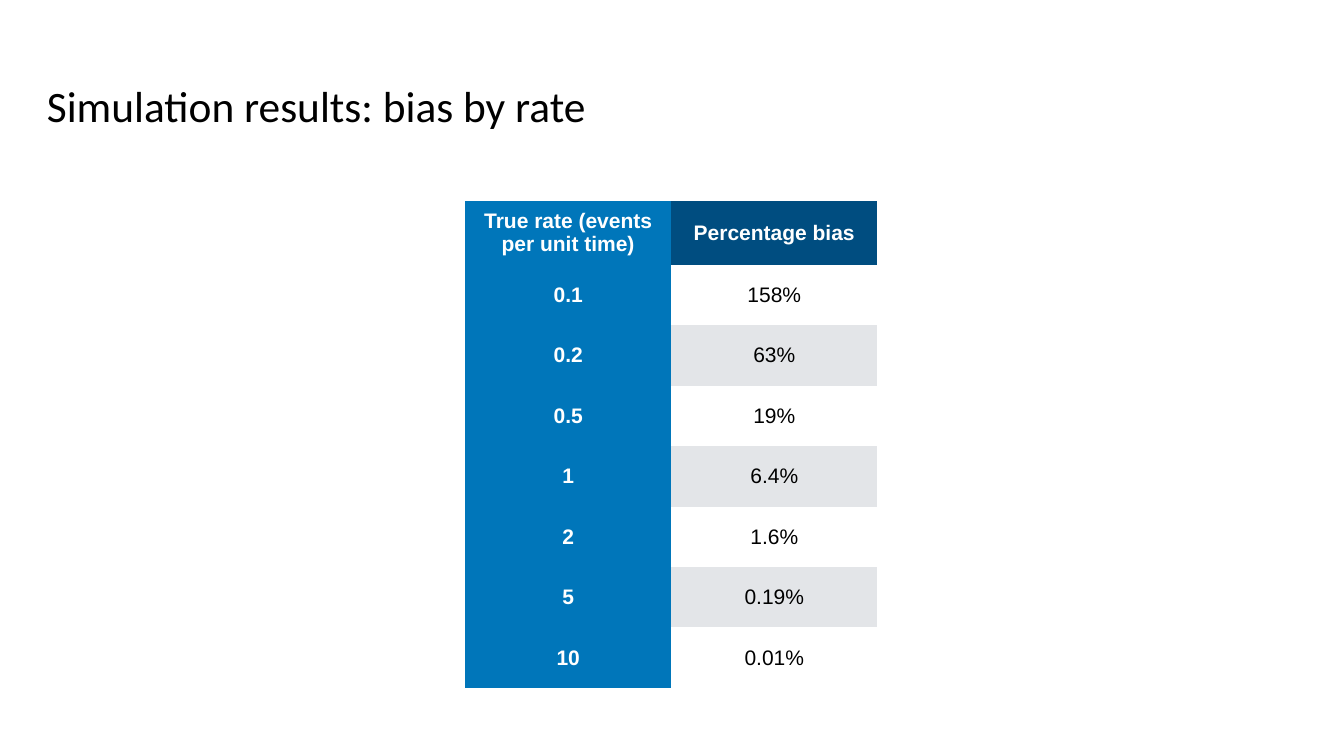
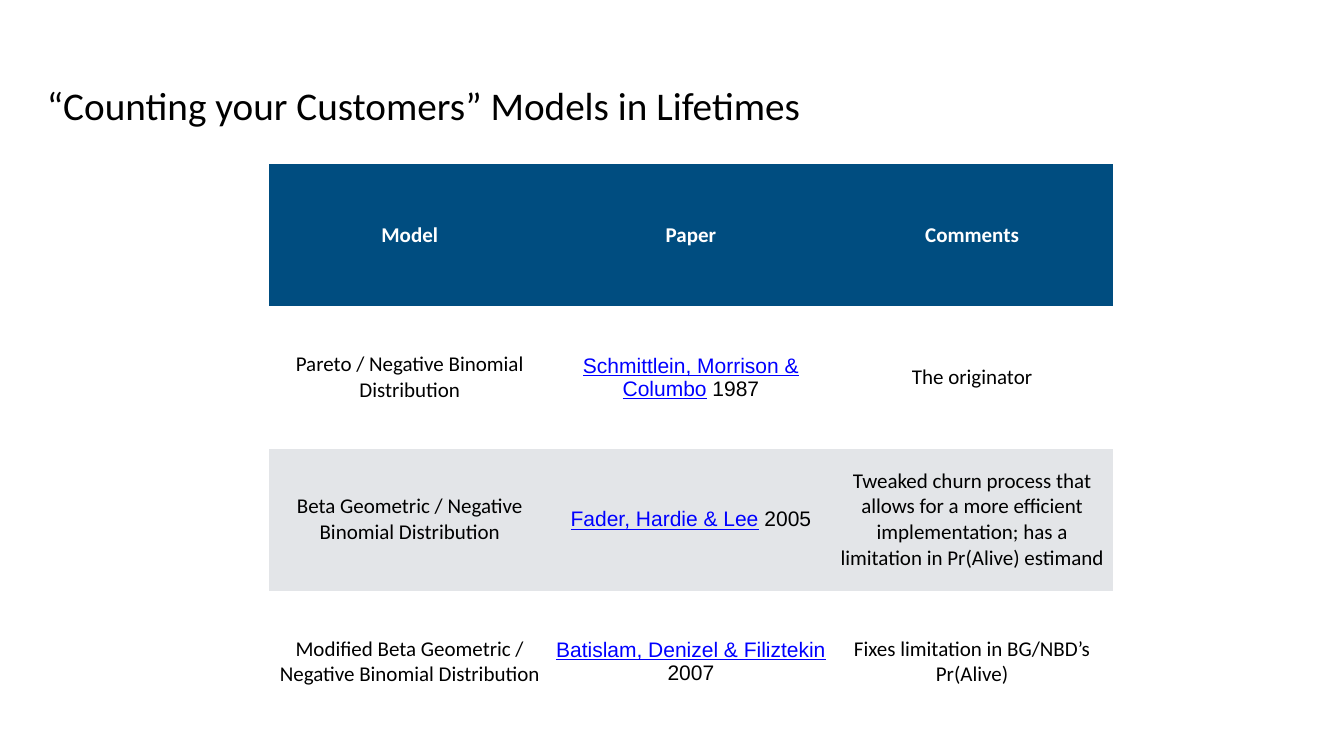
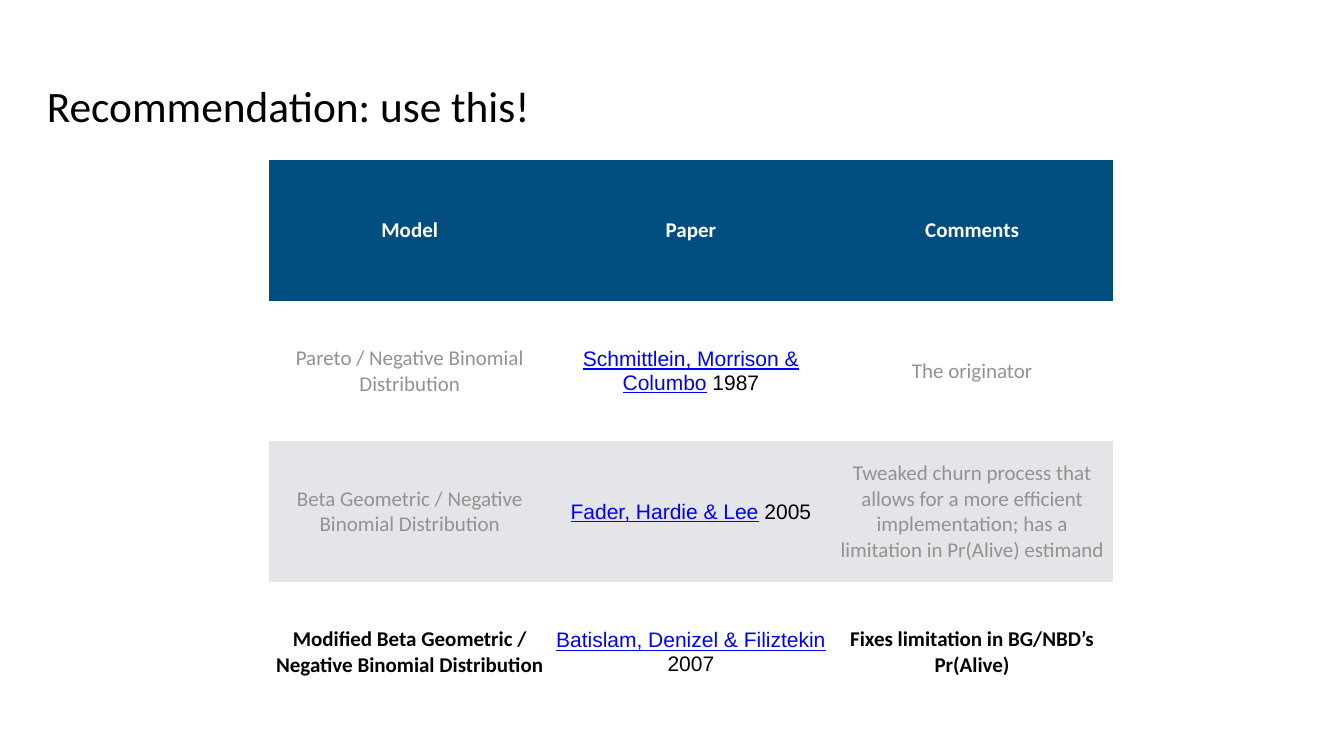
from pptx import Presentation
from pptx.dml.color import RGBColor
from pptx.enum.text import MSO_ANCHOR as Anchor, MSO_AUTO_SIZE as AutoSize, PP_ALIGN as Align
from pptx.util import Pt

PX = 9144  # 100 px to the inch
COLORS = {
    "header": "004D80",
    "first_column": "0076BA",
    "band": "E3E5E8",
    "white": "FFFFFF",
    "black": "000000",
    "muted": "929292",
    "link": "0000FF",
}
NO_STYLE = "{2D5ABB26-0587-4C30-8999-92F81FD0307C}"

presentation = Presentation()
presentation.slide_width = 2667 * PX
presentation.slide_height = 1500 * PX


def add_slide(title_text, title_size, left, top, column_width, row_heights, column_count):
    """Add a titled slide and return its plain table, banded by row."""
    slide = presentation.slides.add_slide(presentation.slide_layouts[5])
    title = slide.shapes.title
    title.left, title.top, title.width, title.height = 85 * PX, 42 * PX, 2496 * PX, 332 * PX
    frame = title.text_frame
    frame.word_wrap = True
    frame.auto_size = AutoSize.NONE
    frame.vertical_anchor = Anchor.MIDDLE
    frame.margin_left = frame.margin_right = frame.margin_top = frame.margin_bottom = 8 * PX
    frame.text = title_text
    paragraph = frame.paragraphs[0]
    paragraph.alignment = Align.LEFT
    font = paragraph.runs[0].font
    font.name, font.size = "Calibri", Pt(title_size)
    font.color.rgb = RGBColor.from_string(COLORS["black"])

    table_shape = slide.shapes.add_table(
        len(row_heights), column_count, left * PX, top * PX,
        column_width * column_count * PX, sum(row_heights) * PX)
    table_shape.element.xpath(".//a:tableStyleId")[0].text = NO_STYLE
    table = table_shape.table
    for column in table.columns:
        column.width = column_width * PX
    for row_index, height in enumerate(row_heights):
        table.rows[row_index].height = height * PX
        fill = "header" if row_index == 0 else "white" if row_index % 2 else "band"
        for cell in table.rows[row_index].cells:
            cell.fill.solid()
            cell.fill.fore_color.rgb = RGBColor.from_string(COLORS[fill])
    return table


def write_cell(cell, runs):
    """Write (text, font name, colour, bold) runs into a centred cell."""
    cell.vertical_anchor = Anchor.MIDDLE
    cell.margin_left = cell.margin_right = cell.margin_top = cell.margin_bottom = 6 * PX
    paragraph = cell.text_frame.paragraphs[0]
    paragraph.alignment = Align.CENTER
    for text, font_name, color, bold in runs:
        run = paragraph.add_run()
        run.text = text
        run.font.name, run.font.size, run.font.bold = font_name, Pt(30), bold
        run.font.underline = color == "link"
        run.font.color.rgb = RGBColor.from_string(COLORS[color])


# Slide 1: bias by rate
bias_rows = [
    ("True rate (events per unit time)", "Percentage bias"),
    ("0.1", "158%"),
    ("0.2", "63%"),
    ("0.5", "19%"),
    ("1", "6.4%"),
    ("2", "1.6%"),
    ("5", "0.19%"),
    ("10", "0.01%"),
]
table = add_slide("Simulation results: bias by rate", 62, 923, 399, 409, [126] + [120] * 7, 2)
for row_index, (rate, bias) in enumerate(bias_rows):
    is_header = row_index == 0
    rate_cell = table.cell(row_index, 0)
    rate_cell.fill.fore_color.rgb = RGBColor.from_string(COLORS["first_column"])
    write_cell(rate_cell, [(rate, "Arial", "white", True)])
    write_cell(table.cell(row_index, 1),
               [(bias, "Arial", "white" if is_header else "black", is_header)])

# Slides 2 and 3: the models, first all alike, then with the last one stressed
model_headers = ["Model", "Paper", "Comments"]
models = [
    ("Pareto / Negative Binomial Distribution",
     "Schmittlein, Morrison & Columbo", 1987,
     "The originator"),
    ("Beta Geometric / Negative Binomial Distribution",
     "Fader, Hardie & Lee", 2005,
     "Tweaked churn process that allows for a more efficient implementation; "
     "has a limitation in Pr(Alive) estimand"),
    ("Modified Beta Geometric / Negative Binomial Distribution",
     "Batislam, Denizel & Filiztekin", 2007,
     "Fixes limitation in BG/NBD’s Pr(Alive)"),
]
plain, muted, stressed = ("black", False), ("muted", False), ("black", True)
model_slides = [
    ("“Counting your Customers” Models in Lifetimes", 56, 326, 282, [plain] * 3),
    ("Recommendation: use this!", 62, 318, 279, [muted, muted, stressed]),
]
for title_text, title_size, top, row_height, row_styles in model_slides:
    table = add_slide(title_text, title_size, 534, top, 558, [row_height] * 4, 3)
    for column_index, header in enumerate(model_headers):
        write_cell(table.cell(0, column_index), [(header, "Calibri", "white", True)])
    for row_index, (model, style) in enumerate(zip(models, row_styles), start=1):
        name, authors, year, comment = model
        write_cell(table.cell(row_index, 0), [(name, "Calibri", *style)])
        write_cell(table.cell(row_index, 1), [(authors, "Arial", "link", False),
                                              (f" {year}", "Arial", "black", False)])
        write_cell(table.cell(row_index, 2), [(comment, "Calibri", *style)])

presentation.save("out.pptx")
